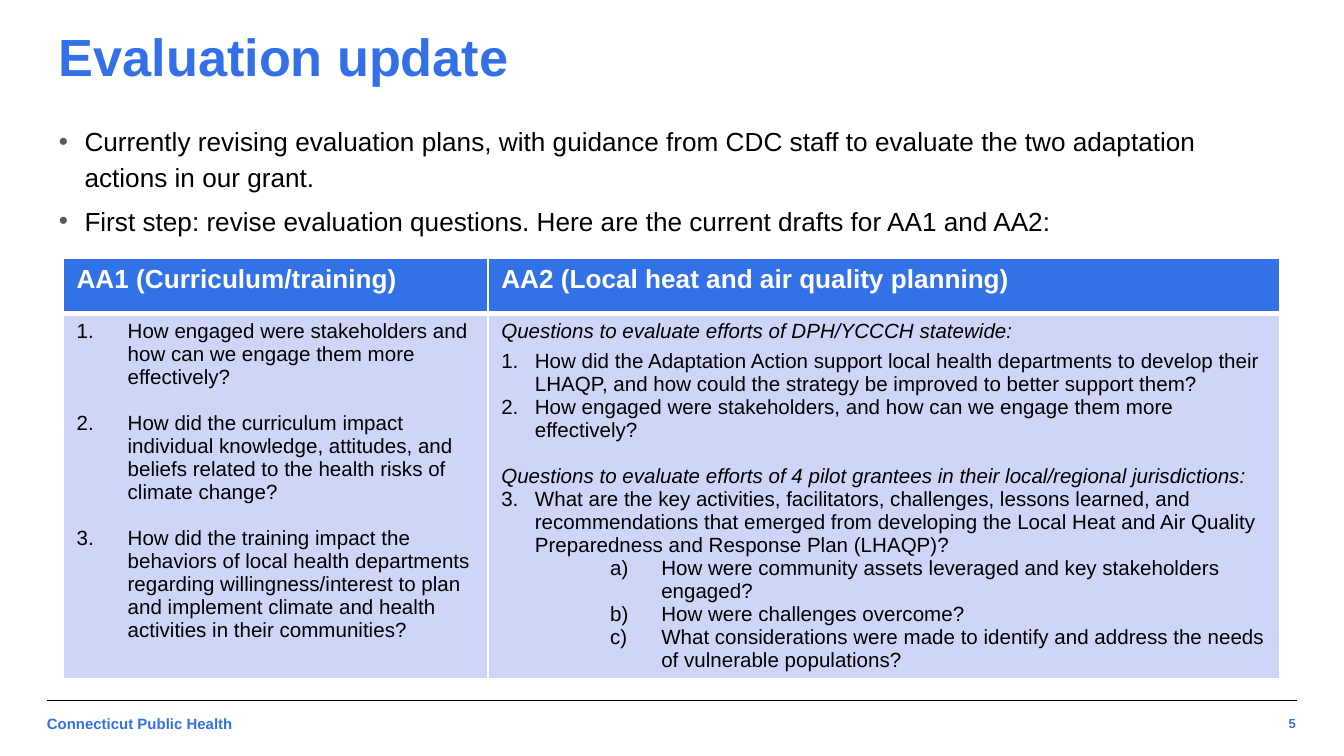
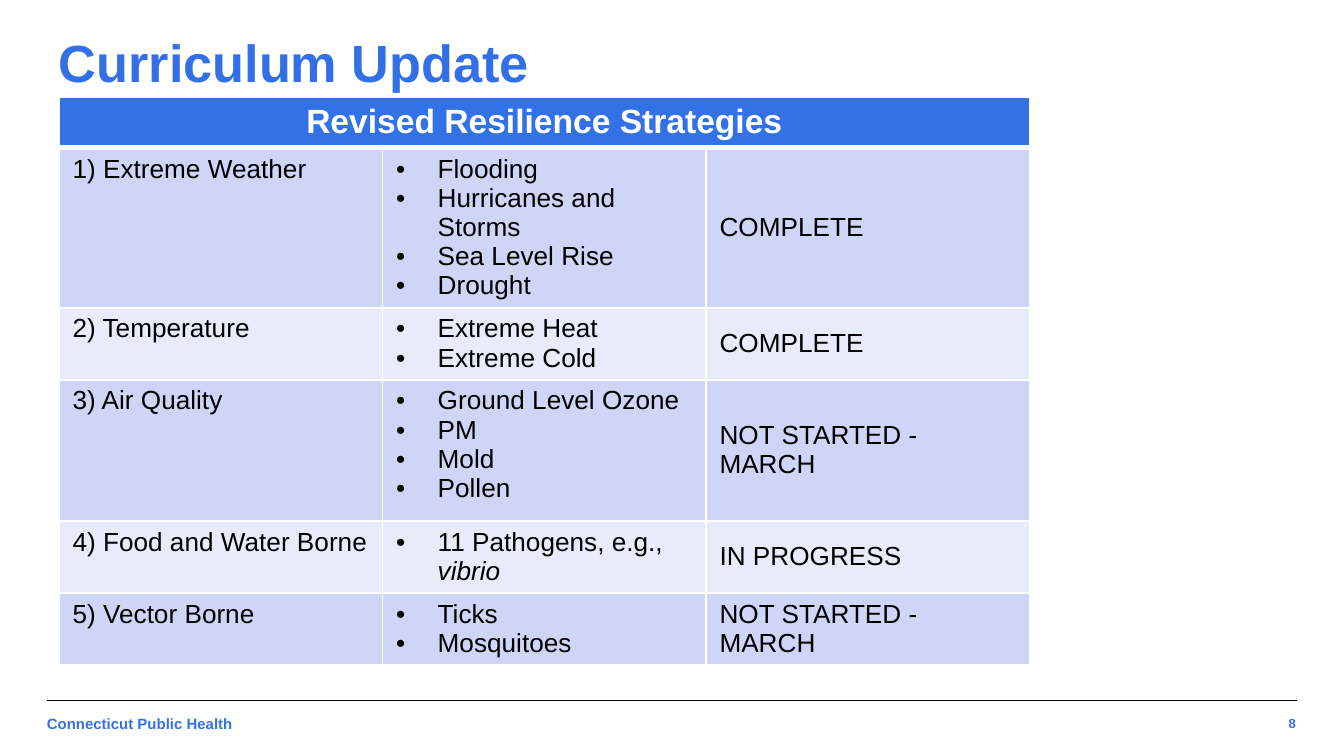
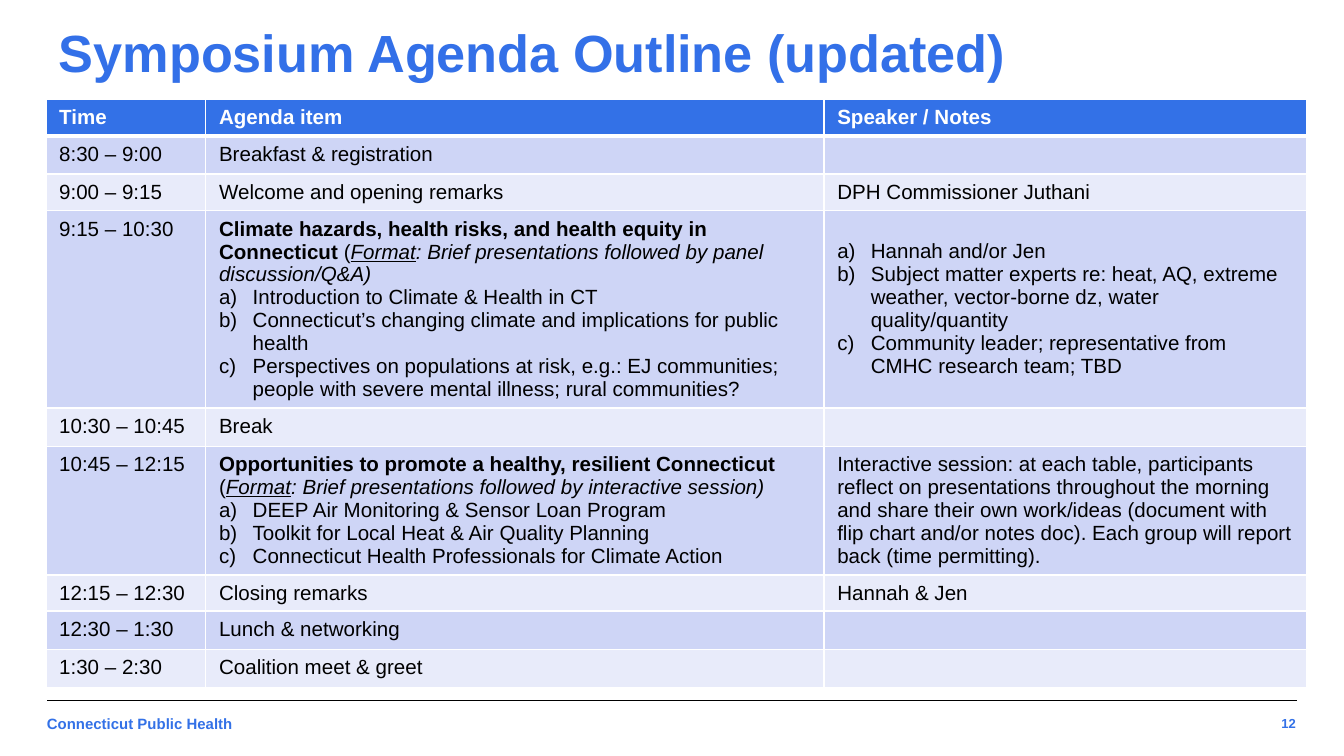
from dataclasses import dataclass

import pptx
import pptx.dml.color
import pptx.enum.shapes
import pptx.enum.text
import pptx.oxml.ns
import pptx.util
from lxml import etree

RGB = pptx.dml.color.RGBColor
TITLE_BLUE = RGB(0x33, 0x70, 0xE8)
BLUE = RGB(0x33, 0x71, 0xE7)
BAND_DARK = RGB(0xCE, 0xD5, 0xF6)
BAND_LIGHT = RGB(0xE8, 0xEB, 0xFA)
WHITE = RGB(0xFF, 0xFF, 0xFF)
BLACK = RGB(0x00, 0x00, 0x00)
GREY = RGB(0x59, 0x59, 0x59)

FONT = "Arial"
COLUMNS, ROWS = 100, 56.25
UNIT = pptx.util.Inches(0.1)
BLANK_LAYOUT = 6
TABLE_LEADING = {11: 12.3, 14: 15.6, 18: 20.1}  # text size to line height, points
BLANK_LINE = TABLE_LEADING[11]

TOP = pptx.enum.text.MSO_ANCHOR.TOP
MIDDLE = pptx.enum.text.MSO_ANCHOR.MIDDLE
CENTER = pptx.enum.text.PP_ALIGN.CENTER
RIGHT = pptx.enum.text.PP_ALIGN.RIGHT


@dataclass
class Line:
    """One paragraph; runs are (text, style) pairs, style being letters of "biu"."""
    runs: list
    marker: str = ""
    indent: float = 0
    hang: float = 0
    level: int = 0
    start: int = 1
    before: float = 0
    after: float = 0
    spacing: float = 0
    align: object = None


@dataclass
class Cell:
    lines: list
    anchor: object = TOP
    skip: float = 0  # extra grid rows above the text


def grid(count):
    return pptx.util.Emu(round(count * UNIT))


def plain(text, style="", **layout):
    return Line([(text, style)], **layout)


def listed(texts, marker, hang, **layout):
    return [plain(text, marker=marker, indent=hang, hang=hang, **layout)
            for text in texts]


def add_xml(parent, tag, **attributes):
    child = etree.SubElement(parent, pptx.oxml.ns.qn(tag))
    for name, value in attributes.items():
        child.set(name, str(value))
    return child


def mark_paragraph(paragraph, line, color):
    properties = paragraph._p.get_or_add_pPr()
    properties.set("marL", str(grid(line.indent)))
    properties.set("indent", str(-grid(line.hang)))
    add_xml(add_xml(properties, "a:buClr"), "a:srgbClr", val=color)
    add_xml(properties, "a:buFont", typeface=FONT)
    if line.marker == "•":
        add_xml(properties, "a:buChar", char=line.marker)
    else:
        scheme = {"1.": "arabicPeriod", "a)": "alphaLcParenR"}[line.marker]
        numbering = add_xml(properties, "a:buAutoNum", type=scheme)
        if line.start > 1:
            numbering.set("startAt", str(line.start))


def write_lines(frame, lines, size, color, bold=False, marker_color=BLACK):
    for index, line in enumerate(lines):
        paragraph = frame.add_paragraph() if index else frame.paragraphs[0]
        paragraph.level = line.level
        if line.align is not None:
            paragraph.alignment = line.align
        if line.before:
            paragraph.space_before = pptx.util.Pt(line.before)
        if line.after:
            paragraph.space_after = pptx.util.Pt(line.after)
        if line.spacing:
            paragraph.line_spacing = line.spacing
        if line.marker:
            mark_paragraph(paragraph, line, color=marker_color)
        for text, style in line.runs:
            run = paragraph.add_run()
            run.text = text
            run.font.name = FONT
            run.font.size = pptx.util.Pt(size)
            run.font.color.rgb = color
            run.font.bold = bold or "b" in style
            run.font.italic = "i" in style
            run.font.underline = "u" in style
        if not line.runs:
            add_xml(paragraph._p, "a:endParaRPr", sz=size * 100)


def add_text(slide, left, top, width, height, lines, size, color,
             bold=False, anchor=TOP, marker_color=BLACK):
    frame = slide.shapes.add_textbox(
        grid(left), grid(top), grid(width), grid(height)).text_frame
    frame.word_wrap = True
    frame.vertical_anchor = anchor
    frame.margin_left = frame.margin_right = grid(1)
    frame.margin_top = frame.margin_bottom = grid(1)
    write_lines(frame, lines, size, color, bold, marker_color)


def add_footer(slide, number):
    add_text(slide, 91.4, 52.6, 6, 2.5, [plain(number, align=RIGHT)],
             7, BLUE, bold=True, anchor=MIDDLE)
    add_text(slide, 2.5, 52.5, 32.8, 3.4, [plain("Connecticut Public Health")],
             8, BLUE, bold=True)
    rule = slide.shapes.add_connector(
        pptx.enum.shapes.MSO_CONNECTOR.STRAIGHT,
        grid(96.5), grid(52.12), grid(3.5), grid(52.12))
    rule.line.color.rgb = BLACK
    rule.line.width = pptx.util.Pt(0.75)
    add_xml(rule._element.spPr, "a:effectLst")


def add_page(deck, title, title_top, number):
    slide = deck.slides.add_slide(deck.slide_layouts[BLANK_LAYOUT])
    add_footer(slide, number)
    add_text(slide, 3.4, title_top, 93.2, 3.3, [plain(title)],
             28, TITLE_BLUE, bold=True, anchor=MIDDLE)
    return slide


def draw_borders(cell, header):
    """White edges; body cells take their top edge from the row above."""
    widths = {"a:lnL": 1, "a:lnR": 1, "a:lnT": 1, "a:lnB": 3 if header else 1}
    if not header:
        del widths["a:lnT"]
    properties = cell._tc.get_or_add_tcPr()
    for edge, width in widths.items():
        border = add_xml(properties, edge, w=pptx.util.Pt(width))
        add_xml(add_xml(border, "a:solidFill"), "a:srgbClr", val=WHITE)


def fill_cell(cell, content, row, size):
    header = row == 0
    draw_borders(cell, header)
    cell.fill.solid()
    cell.fill.fore_color.rgb = BLUE if header else (BAND_LIGHT, BAND_DARK)[row % 2]
    if isinstance(content, str):
        content = Cell([plain(content) if content else Line([])])
    cell.vertical_anchor = content.anchor
    cell.margin_top = grid(0.5 + content.skip)
    for line in content.lines:
        line.spacing = pptx.util.Pt(TABLE_LEADING[size])
    write_lines(cell.text_frame, content.lines, size,
                WHITE if header else BLACK, bold=header)


def add_banded_table(slide, left, top, widths, heights, contents, size, header_size):
    """A first row shorter than the column count is merged across the table."""
    table = slide.shapes.add_table(
        len(heights), len(widths), grid(left), grid(top),
        grid(sum(widths)), grid(sum(heights))).table
    for column, width in zip(table.columns, widths):
        column.width = grid(width)
    for row, height in zip(table.rows, heights):
        row.height = grid(height)
    if len(contents[0]) < len(widths):
        table.cell(0, 0).merge(table.cell(0, len(widths) - 1))
    for row, cells in enumerate(contents):
        for column, content in enumerate(cells):
            fill_cell(table.cell(row, column), content, row,
                      size if row else header_size)


def build_evaluation(deck):
    slide = add_page(deck, "Evaluation update", 2.5, "5")
    steps = listed([
        "Currently revising evaluation plans, with guidance from CDC staff to evaluate "
        "the two adaptation actions in our grant.",
        "First step: revise evaluation questions. Here are the current drafts for AA1 and AA2:",
    ], "•", 1.9, spacing=1.15, after=4)
    add_text(slide, 3.4, 8, 93.2, 11.2, steps, 14, BLACK, marker_color=GREY)

    training = listed([
        "How engaged were stakeholders and how can we engage them more effectively?",
        "How did the curriculum impact individual knowledge, attitudes, and beliefs "
        "related to the health risks of climate change?",
        "How did the training impact the behaviors of local health departments regarding "
        "willingness/interest to plan and implement climate and health activities in "
        "their communities?",
    ], "1.", 3.8)
    for question in training[1:]:
        question.before = BLANK_LINE

    planning = [
        plain("Questions to evaluate efforts of DPH/YCCCH statewide:", "i", after=4),
        *listed([
            "How did the Adaptation Action support local health departments to develop "
            "their LHAQP, and how could the strategy be improved to better support them?",
            "How engaged were stakeholders, and how can we engage them more effectively?",
        ], "1.", 2.5),
        plain("Questions to evaluate efforts of 4 pilot grantees in their local/regional "
              "jurisdictions:", "i", before=BLANK_LINE),
        *listed([
            "What are the key activities, facilitators, challenges, lessons learned, and "
            "recommendations that emerged from developing the Local Heat and Air Quality "
            "Preparedness and Response Plan (LHAQP)?",
        ], "1.", 2.5, start=3),
    ]
    for detail in [
            "How were community assets leveraged and key stakeholders engaged?",
            "How were challenges overcome?",
            "What considerations were made to identify and address the needs of "
            "vulnerable populations?"]:
        planning.append(plain(detail, marker="a)", indent=11.9, hang=3.8, level=1))

    add_banded_table(
        slide, 4.7, 19.2, [31.6, 58.9], [4.1, 27.2],
        [["AA1 (Curriculum/training)", "AA2 (Local heat and air quality planning)"],
         [Cell(training), Cell(planning)]], 11, 14)


def build_curriculum(deck):
    slide = add_page(deck, "Curriculum Update", 2.9, "8")
    pathogens = listed(["11 Pathogens, e.g., "], "•", 3.1)
    pathogens[0].runs.append(("vibrio", "i"))
    strategies = [
        ("1) Extreme Weather",
         listed(["Flooding", "Hurricanes and Storms", "Sea Level Rise", "Drought"], "•", 3.1),
         "COMPLETE"),
        ("2) Temperature", listed(["Extreme Heat", "Extreme Cold"], "•", 3.1), "COMPLETE"),
        ("3) Air Quality",
         listed(["Ground Level Ozone", "PM", "Mold", "Pollen"], "•", 3.1),
         "NOT STARTED - MARCH"),
        ("4) Food and Water Borne", pathogens, "IN PROGRESS"),
        ("5) Vector Borne", listed(["Ticks", "Mosquitoes"], "•", 3.1), "NOT STARTED - MARCH"),
    ]
    contents = [[Cell([plain("Revised Resilience Strategies", align=CENTER)])]]
    for strategy, topics, status in strategies:
        contents.append([strategy, Cell(topics), Cell([plain(status)], MIDDLE)])
    add_banded_table(slide, 4.4, 7.2, [24.07] * 3, [3.8, 11.9, 5.36, 10.5, 5.36, 5.36],
                     contents, 14, 18)


def session(theme, opening, form, talks):
    """A bold theme with its format in brackets, then lettered talks."""
    heading = Line([(theme, "b"), (opening, ""), ("Format", "iu"), (form, "i")])
    return Cell([heading, *listed(talks, "a)", 2.5)])


def build_agenda(deck):
    slide = add_page(deck, "Symposium Agenda Outline (updated)", 2.2, "12")
    hazards = session(
        "Climate hazards, health risks, and health equity in Connecticut ", "(",
        ": Brief presentations followed by panel discussion/Q&A)",
        ["Introduction to Climate & Health in CT",
         "Connecticut’s changing climate and implications for public health",
         "Perspectives on populations at risk, e.g.: EJ communities; people with severe "
         "mental illness; rural communities?"])
    speakers = Cell(listed(
        ["Hannah and/or Jen",
         "Subject matter experts re: heat, AQ, extreme weather, vector-borne dz, water "
         "quality/quantity",
         "Community leader; representative from CMHC research team; TBD"],
        "a)", 2.5), skip=1.7)
    opportunities = session(
        "Opportunities to promote a healthy, resilient Connecticut", " (",
        ": Brief presentations followed by interactive session)",
        ["DEEP Air Monitoring & Sensor Loan Program",
         "Toolkit for Local Heat & Air Quality Planning",
         "Connecticut Health Professionals for Climate Action"])
    interactive = (
        "Interactive session: at each table, participants reflect on presentations "
        "throughout the morning and share their own work/ideas (document with flip chart "
        "and/or notes doc). Each group will report back (time permitting).")
    contents = [
        ["Time", "Agenda item", "Speaker / Notes"],
        ["8:30 – 9:00", "Breakfast & registration", ""],
        ["9:00 – 9:15", "Welcome and opening remarks", "DPH Commissioner Juthani"],
        ["9:15 – 10:30", hazards, speakers],
        ["10:30 – 10:45", "Break", ""],
        ["10:45 – 12:15", opportunities, interactive],
        ["12:15 – 12:30", "Closing remarks", "Hannah & Jen"],
        ["12:30 – 1:30", "Lunch & networking", ""],
        ["1:30 – 2:30", "Coalition meet & greet", ""],
    ]
    heights = [2.72] * len(contents)
    heights[3], heights[5] = 14.7, 9.56
    add_banded_table(slide, 3.4, 7.4, [11.9, 46, 35.9], heights, contents, 11, 11)


def main():
    deck = pptx.Presentation()
    deck.slide_width = grid(COLUMNS)
    deck.slide_height = grid(ROWS)
    build_evaluation(deck)
    build_curriculum(deck)
    build_agenda(deck)
    deck.save("out.pptx")


if __name__ == "__main__":
    main()
